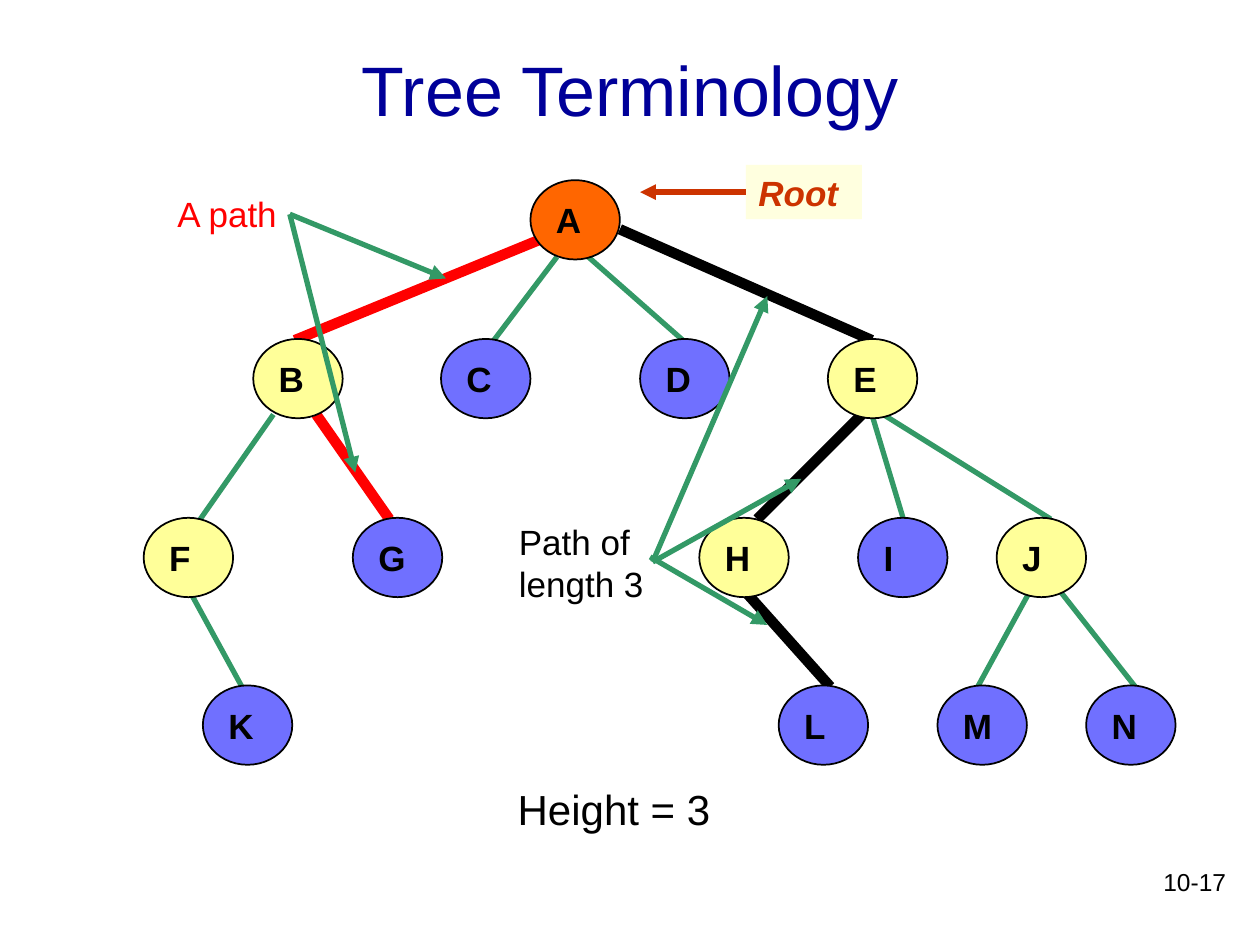
"""Build a slide that explains tree terminology with a labelled tree."""
import pptx
import pptx.dml.color
import pptx.enum.shapes
import pptx.enum.text
import pptx.oxml.xmlchemy
import pptx.util

Inches = pptx.util.Inches
RGBColor = pptx.dml.color.RGBColor
ALIGN = pptx.enum.text.PP_ALIGN
ANCHOR = pptx.enum.text.MSO_ANCHOR
SHAPE = pptx.enum.shapes.MSO_SHAPE

BLACK = RGBColor(0x00, 0x00, 0x00)
NAVY = RGBColor(0x00, 0x00, 0x99)
RED = RGBColor(0xFF, 0x00, 0x00)
GREEN = RGBColor(0x33, 0x99, 0x66)
RUST = RGBColor(0xCC, 0x33, 0x00)
CREAM = RGBColor(0xFF, 0xFF, 0xDF)
ORANGE = RGBColor(0xFF, 0x66, 0x00)
YELLOW = RGBColor(0xFF, 0xFF, 0x99)
BLUE = RGBColor(0x70, 0x70, 0xFF)

NODE_WIDTH, NODE_HEIGHT = 0.71, 0.63
LEVEL_TOPS = (1.43, 2.69, 4.11, 5.44)
EDGE_SPANS = ((2.04, 2.7), (3.29, 4.12), (4.7, 5.45))

NODES = (
    (0, ORANGE, {"A": 4.21}),
    (1, YELLOW, {"B": 2.01, "E": 6.57}),
    (1, BLUE, {"C": 3.5, "D": 5.08}),
    (2, YELLOW, {"F": 1.14, "H": 5.55, "J": 7.91}),
    (2, BLUE, {"G": 2.8, "I": 6.81}),
    (3, BLUE, {"K": 1.61, "L": 6.18, "M": 7.44, "N": 8.62}),
)
PLAIN_EDGES = (
    (0, 4.42, 3.92), (0, 4.67, 5.42),
    (1, 2.17, 1.59), (1, 7.01, 8.34), (1, 6.92, 7.17),
    (2, 1.51, 1.92), (2, 8.42, 9.01), (2, 8.17, 7.76),
)
PATH_EDGES = (
    (RED, (4.29, 1.9), (2.34, 2.7)),
    (RED, (2.51, 3.29), (3.09, 4.12)),
    (BLACK, (4.92, 1.82), (6.92, 2.7)),
    (BLACK, (6.84, 3.29), (6.01, 4.12)),
    (BLACK, (5.92, 4.7), (6.59, 5.45)),
)
POINTERS = (
    ((2.3, 1.7), (3.54, 2.21)),
    ((2.3, 1.7), (2.82, 3.75)),
    ((5.18, 4.46), (6.09, 2.35)),
    ((5.18, 4.46), (6.36, 3.8)),
    ((5.16, 4.42), (6.09, 4.96)),
)


def write_text(frame, text, size=20, color=BLACK, bold=False, italic=False,
               align=ALIGN.LEFT, anchor=ANCHOR.TOP, wrap=True, font="Arial"):
    """Fill a text frame, one paragraph for each line of text."""
    frame.word_wrap = wrap
    frame.vertical_anchor = anchor
    for index, line in enumerate(text.split("\n")):
        paragraph = frame.add_paragraph() if index else frame.paragraphs[0]
        paragraph.alignment = align
        run = paragraph.add_run()
        run.text = line
        run.font.name = font
        run.font.size = pptx.util.Pt(size)
        run.font.bold = bold
        run.font.italic = italic
        run.font.color.rgb = color


class TreeSlide:
    """Hold the style and the current slide."""

    def __init__(self, slide, line_width=3, path_width=6):
        self.shapes = slide.shapes
        self.line_width = line_width
        self.path_width = path_width

    def label(self, text, left, top, width, height, **style):
        """Add a text box."""
        box = self.shapes.add_textbox(
            Inches(left), Inches(top), Inches(width), Inches(height))
        write_text(box.text_frame, text, **style)

    def filled(self, kind, text, left, top, width, height, fill,
               outline=None, **style):
        """Add a filled shape with text."""
        shape = self.shapes.add_shape(
            kind, Inches(left), Inches(top), Inches(width), Inches(height))
        shape.shadow.inherit = False
        shape.fill.solid()
        shape.fill.fore_color.rgb = fill
        if outline is None:
            shape.line.fill.background()
        else:
            shape.line.color.rgb = outline
            shape.line.width = pptx.util.Pt(1)
        write_text(shape.text_frame, text, **style)
        return shape

    def node(self, letter, left, level, fill):
        """Add a tree node on its level."""
        self.filled(SHAPE.OVAL, letter, left, LEVEL_TOPS[level], NODE_WIDTH,
                    NODE_HEIGHT, fill, BLACK, bold=True, anchor=ANCHOR.MIDDLE)

    def line(self, start, end, color=GREEN, width=None, arrow=False):
        """Add a straight line, with an arrowhead at its end if asked."""
        connector = self.shapes.add_connector(
            pptx.enum.shapes.MSO_CONNECTOR.STRAIGHT,
            *(Inches(value) for value in (*start, *end)))
        connector.line.color.rgb = color
        connector.line.width = pptx.util.Pt(width or self.line_width)
        properties = connector._element.spPr
        if arrow:
            head = pptx.oxml.xmlchemy.OxmlElement("a:tailEnd")
            head.set("type", "triangle")
            properties.get_or_add_ln().append(head)
        properties.append(pptx.oxml.xmlchemy.OxmlElement("a:effectLst"))
        return connector


def main():
    """Build and save the presentation."""
    presentation = pptx.Presentation()
    presentation.slide_width = Inches(10)
    presentation.slide_height = Inches(7.5)
    tree = TreeSlide(presentation.slides.add_slide(presentation.slide_layouts[6]))

    tree.label("10-17", 7.75, 6.83, 2.08, 0.5, size=14, align=ALIGN.RIGHT)
    tree.label("Tree Terminology", 0.75, 0.33, 8.5, 0.75, size=40, color=NAVY,
               align=ALIGN.CENTER, anchor=ANCHOR.MIDDLE)

    root = tree.filled(SHAPE.RECTANGLE, "Root", 5.92, 1.31, 0.92, 0.43, CREAM,
                       color=RUST, bold=True, italic=True)
    root_middle = 1.31 + 0.43 / 2
    root_arrow = tree.line((5.92, root_middle), (5.08, root_middle), RUST, arrow=True)
    root_arrow.begin_connect(root, 1)

    for level, start, end in PLAIN_EDGES:
        top, bottom = EDGE_SPANS[level]
        tree.line((start, top), (end, bottom))
    for color, start, end in PATH_EDGES:
        tree.line(start, end, color, tree.path_width)
    for level, fill, lefts in NODES:
        for letter, left in lefts.items():
            tree.node(letter, left, level, fill)

    tree.label("Height = 3", 4.01, 6.17, 1.75, 0.5, size=24, wrap=False)
    tree.label("A path", 1.31, 1.48, 1, 0.44, color=RED, wrap=False)
    tree.label("Path of\nlength 3", 4.02, 4.08, 1.2, 0.77, wrap=False)
    for start, end in POINTERS:
        tree.line(start, end, arrow=True)

    presentation.save("out.pptx")


if __name__ == "__main__":
    main()
